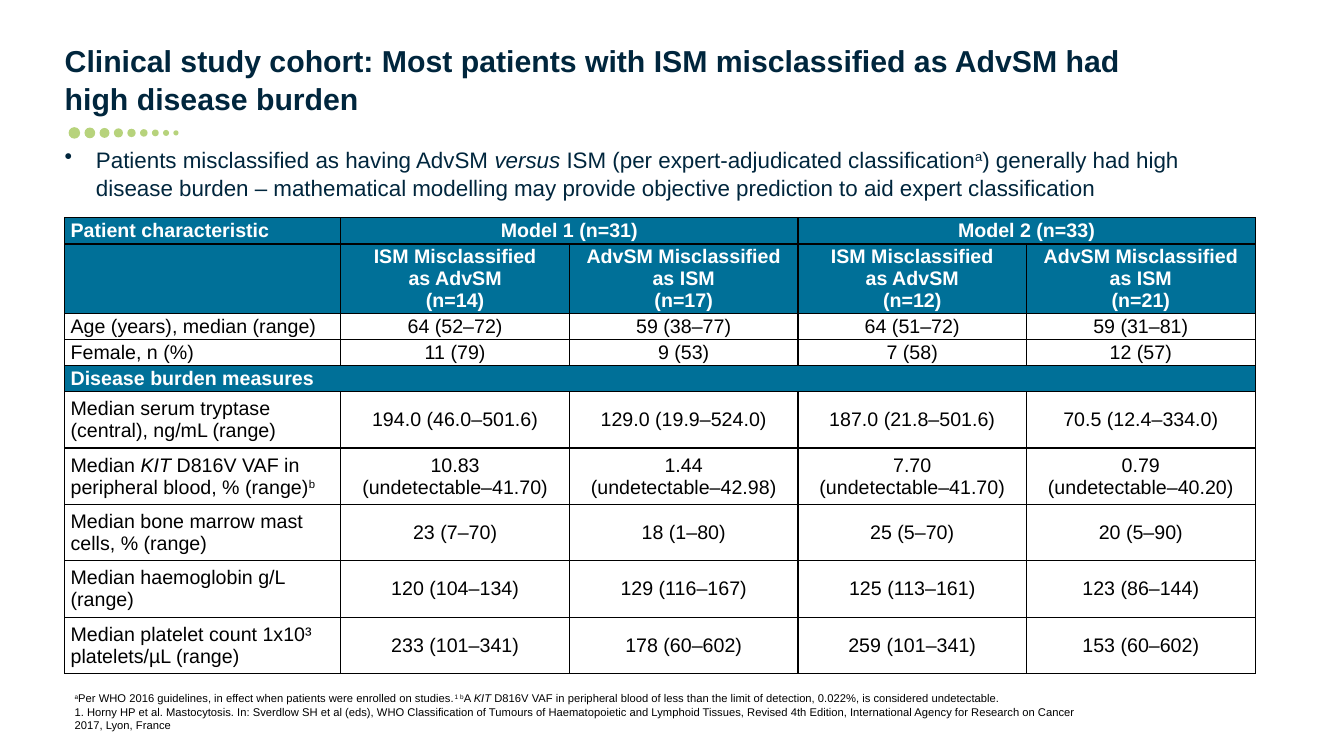
from dataclasses import dataclass

from lxml import etree
from pptx import Presentation
from pptx.dml.color import RGBColor
from pptx.enum.shapes import MSO_SHAPE
from pptx.enum.text import MSO_ANCHOR, MSO_AUTO_SIZE, PP_ALIGN
from pptx.oxml.ns import qn
from pptx.util import Cm, Pt

LEFT, CENTER = PP_ALIGN.LEFT, PP_ALIGN.CENTER
TOP, MIDDLE, BOTTOM = MSO_ANCHOR.TOP, MSO_ANCHOR.MIDDLE, MSO_ANCHOR.BOTTOM
NO_AUTOFIT = MSO_AUTO_SIZE.NONE
OVAL = MSO_SHAPE.OVAL

# Content: "|" separates runs, "*" opens an italic run, "^" a superscript run;
# "\n" is a line break, and a list holds several paragraphs
TITLE = "Clinical study cohort: Most patients with ISM misclassified as AdvSM had high disease burden"
KEY_POINT = (
    "Patients misclassified as having AdvSM |*versus| ISM (per expert-adjudicated classification|^a|"
    ") generally had high disease burden – mathematical modelling may provide objective prediction "
    "to aid expert classification"
)
# None continues the cell to its left
COHORT = [
    ["Patient characteristic", "Model 1 (n=31)", None, "Model 2 (n=33)", None],
    ["",
     ["ISM Misclassified", "as AdvSM", "(n=14)"], "AdvSM Misclassified as ISM\n(n=17)",
     ["ISM Misclassified", "as AdvSM", "(n=12)"], "AdvSM Misclassified as ISM\n(n=21)"],
    ["Age (years), median (range)", "64 (52–72)", "59 (38–77)", "64 (51–72)", "59 (31–81)"],
    ["Female, n (%)", "11 (79)", "9 (53)", "7 (58)", "12 (57)"],
    ["Disease burden measures", None, None, None, None],
    ["Median serum tryptase (central), ng/mL (range)",
     "194.0 (46.0–501.6)", "129.0 (19.9–524.0)", "187.0 (21.8–501.6)", "70.5 (12.4–334.0)"],
    ["Median |*KIT| D816V VAF in peripheral blood, % (range)|^b",
     "10.83\n(undetectable–41.70)", "1.44\n(undetectable–42.98)",
     "7.70\n(undetectable–41.70)", "0.79\n(undetectable–40.20)"],
    ["Median bone marrow mast cells, % (range)", "23 (7–70)", "18 (1–80)", "25 (5–70)", "20 (5–90)"],
    ["Median haemoglobin g/L (range)",
     "120 (104–134)", "129 (116–167)", "125 (113–161)", "123 (86–144)"],
    ["Median platelet count 1x10³ platelets/µL (range)",
     "233 (101–341)", "178 (60–602)", "259 (101–341)", "153 (60–602)"],
]
BANDS = (0, 1, 4)
FOOTNOTE = (
    "^a|Per WHO 2016 guidelines, in effect when patients were enrolled on studies.|^1 b|A |*KIT"
    "| D816V VAF in peripheral blood of less than the limit of detection, 0.022%, is considered "
    "undetectable.\n1. Horny HP et al. Mastocytosis. In: Sverdlow SH et al (eds), WHO Classification "
    "of Tumours of Haematopoietic and Lymphoid Tissues, Revised 4th Edition, International Agency "
    "for Research on Cancer 2017, Lyon, France"
)


@dataclass(frozen=True)
class Theme:
    font: str = "Arial"
    navy: str = "00263D"
    teal: str = "007098"
    green: str = "B7D37C"
    black: str = "000000"
    white: str = "FFFFFF"
    title: float = 21.6
    body: float = 16
    table: float = 14
    note: float = 8
    rule: float = 1
    divider: float = 2.25


THEME = Theme()

# Layout in centimetres
MARGIN, TABLE_WIDTH = 1.63, 30
MODEL_WIDTH = 5.76
COLUMNS = [TABLE_WIDTH - 4 * MODEL_WIDTH] + [MODEL_WIDTH] * 4
ROWS = [0.66, 1.74] + [0.66] * 3 + [1.42] * 5
MODEL_SPLIT = 3
DOT_COUNT, DOT_LARGEST, DOT_SHRINK, DOT_GAP = 9, 0.29, 0.02, 0.11
DOT_LEFT, DOT_MIDDLE = 1.73, 3.35


def write(frame, content, *, size, color=THEME.black, bold=False, align=LEFT,
          spacing=1.0, bullet_indent=None):
    paragraphs = content if isinstance(content, list) else [content]
    for index, text in enumerate(paragraphs):
        paragraph = frame.add_paragraph() if index else frame.paragraphs[0]
        if bullet_indent:
            properties = paragraph._p.get_or_add_pPr()
            properties.set("marL", str(Cm(bullet_indent)))
            properties.set("indent", str(-Cm(bullet_indent)))
            etree.SubElement(properties, qn("a:buChar")).set("char", "•")
        paragraph.alignment = align
        paragraph.line_spacing = spacing
        paragraph.space_before = paragraph.space_after = Pt(0)
        paragraph.font.size = Pt(size)
        for part in text.split("|"):
            mark = part[:1] if part[:1] in ("*", "^") else ""
            for line_index, line in enumerate(part[len(mark):].split("\n")):
                if line_index:
                    paragraph.add_line_break()
                run = paragraph.add_run()
                run.text = line
                run.font.name = THEME.font
                run.font.size = Pt(size)
                run.font.bold = bold
                run.font.color.rgb = RGBColor.from_string(color)
                if mark == "*":
                    run.font.italic = True
                elif mark == "^":
                    run.font._element.set("baseline", "30000")


def set_frame(frame, anchor, insets):
    frame.word_wrap = True
    frame.auto_size = NO_AUTOFIT
    frame.vertical_anchor = anchor
    frame.margin_left, frame.margin_top, frame.margin_right, frame.margin_bottom = map(Cm, insets)


def set_borders(cell, left, right):
    properties = cell._tc.get_or_add_tcPr()
    for side, width in (("L", left), ("R", right), ("T", THEME.rule), ("B", THEME.rule)):
        border = etree.SubElement(properties, qn(f"a:ln{side}"))
        border.set("w", str(Pt(width)))
        fill = etree.SubElement(border, qn("a:solidFill"))
        etree.SubElement(fill, qn("a:srgbClr")).set("val", THEME.black)


def add_dots(slide):
    left = DOT_LEFT
    for index in range(DOT_COUNT):
        size = DOT_LARGEST - index * DOT_SHRINK
        dot = slide.shapes.add_shape(OVAL, Cm(left), Cm(DOT_MIDDLE - size / 2), Cm(size), Cm(size))
        dot.shadow.inherit = False
        dot.fill.solid()
        dot.fill.fore_color.rgb = RGBColor.from_string(THEME.green)
        dot.line.fill.background()
        left += size + DOT_GAP


def add_cohort_table(slide):
    table = slide.shapes.add_table(
        len(ROWS), len(COLUMNS), Cm(MARGIN), Cm(5.49), Cm(TABLE_WIDTH), Cm(sum(ROWS))).table
    table.first_row = table.horz_banding = False
    for column, width in zip(table.columns, COLUMNS):
        column.width = Cm(width)
    for row, height in zip(table.rows, ROWS):
        row.height = Cm(height)

    for r, values in enumerate(COHORT):
        banded = r in BANDS
        for c, value in enumerate(values):
            cell = table.cell(r, c)
            end = c + 1
            while end < len(values) and values[end] is None:
                end += 1
            set_borders(cell,
                        THEME.divider if c == MODEL_SPLIT else THEME.rule,
                        THEME.divider if end == MODEL_SPLIT else THEME.rule)
            if banded:
                cell.fill.solid()
                cell.fill.fore_color.rgb = RGBColor.from_string(THEME.teal)
            else:
                cell.fill.background()
            if value is None:
                continue
            if end > c + 1:
                cell.merge(table.cell(r, end - 1))
            cell.vertical_anchor = MIDDLE
            cell.margin_left = cell.margin_right = Cm(0.15)
            cell.margin_top = cell.margin_bottom = 0
            if value:
                write(cell.text_frame, value, size=THEME.table, bold=banded,
                      color=THEME.white if banded else THEME.black,
                      align=CENTER if c else LEFT)


def main():
    deck = Presentation()
    deck.slide_width, deck.slide_height = Cm(33.87), Cm(19.05)
    slide = deck.slides.add_slide(deck.slide_layouts[5])

    # Title and dotted accent
    title = slide.shapes.title
    title.left, title.top, title.width, title.height = Cm(MARGIN), Cm(1.3), Cm(27.53), Cm(1.85)
    set_frame(title.text_frame, BOTTOM, (0, 0.1, 0.25, 0.2))
    write(title.text_frame, TITLE, size=THEME.title, color=THEME.navy, bold=True, spacing=1.05)
    add_dots(slide)

    # Key point
    key_point = slide.shapes.add_textbox(Cm(MARGIN), Cm(4.45), Cm(TABLE_WIDTH), Cm(0.61)).text_frame
    set_frame(key_point, BOTTOM, (0, 0, 0, 0))
    write(key_point, KEY_POINT, size=THEME.body, color=THEME.navy, spacing=1.05, bullet_indent=0.79)

    # Cohort table and footnote
    add_cohort_table(slide)
    footnote = slide.shapes.add_textbox(Cm(MARGIN), Cm(17.3), Cm(26.37), Cm(1.27)).text_frame
    set_frame(footnote, TOP, (0.25, 0.13, 0.25, 0.13))
    write(footnote, FOOTNOTE, size=THEME.note)
    deck.save("out.pptx")


if __name__ == "__main__":
    main()
